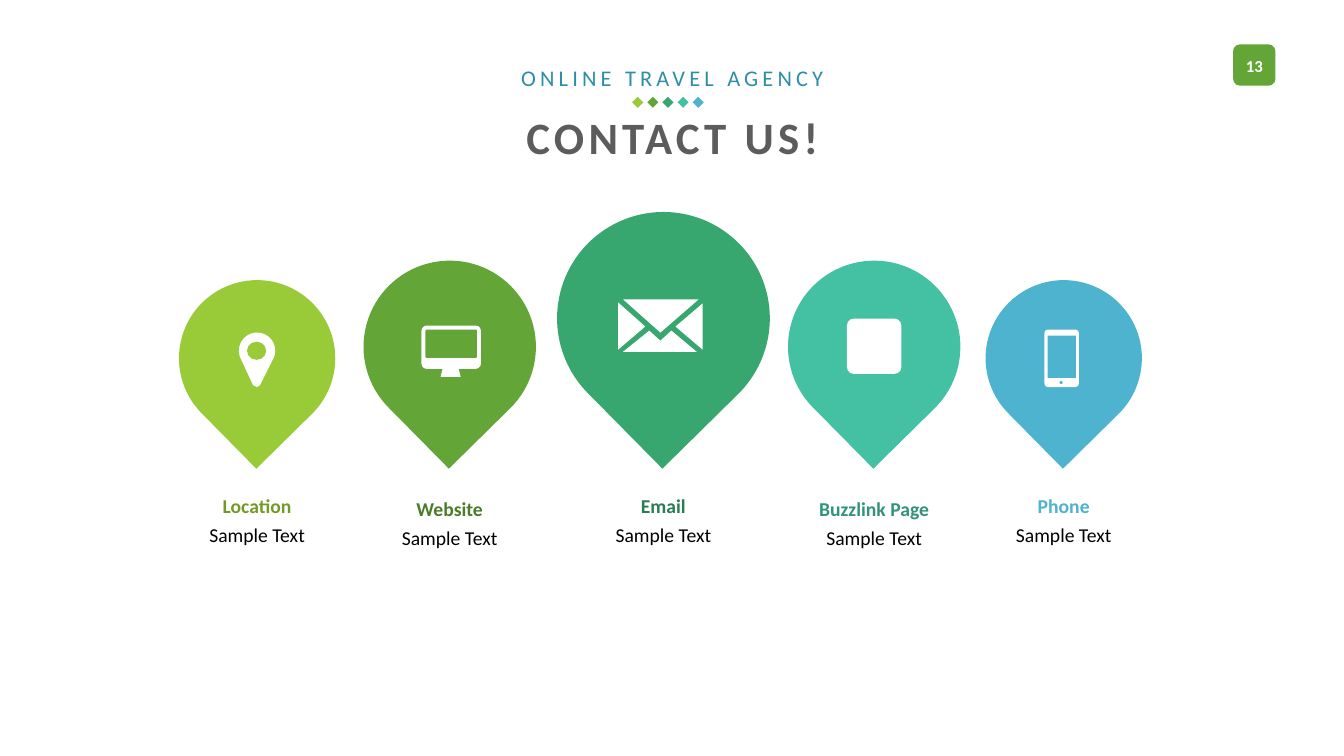
"""Build the contact slide with five map-pin drops."""
from math import cos, radians, sin, sqrt

from pptx import Presentation
from pptx.dml.color import RGBColor
from pptx.enum.shapes import MSO_SHAPE as Kind
from pptx.enum.text import MSO_ANCHOR as Anchor, MSO_AUTO_SIZE as Auto, PP_ALIGN as Align
from pptx.util import Inches, Pt

HUES = {
    "lime": "99CB38", "green": "63A537", "jade": "37A76F", "mint": "44C1A3",
    "sky": "4EB3CF", "white": "FFFFFF", "black": "000000", "grey": "5C5C5C",
    "blue": "2E8EA8", "lime text": "739A28", "green text": "4A7C29",
    "jade text": "297D53", "mint text": "31937B",
}
TITLE = "CONTACT US!"
AGENCY = "ONLINE TRAVEL AGENCY"
PAGE = "13"
SAMPLE = "Sample Text"
DROPS = [
    ("Location", 2.55, 1.55, "lime", "lime text", 4.85),
    ("Website", 4.46, 1.71, "green", "green text", 4.88),
    ("Email", 6.58, 2.11, "jade", "jade text", 4.85),
    ("Buzzlink Page", 8.67, 1.71, "mint", "mint text", 4.88),
    ("Phone", 10.55, 1.55, "sky", "sky", 4.85),
]
TIP = 4.65
MID = 6.67

PIN = [(2.55 + 0.18 * cos(radians(a)), 3.48 + 0.18 * sin(radians(a)))
       for a in range(157, 384, 6)]
PIN += [(2.58, 3.82), (2.55, 3.84), (2.51, 3.82)]
OUTLINES = [
    PIN,
    [(6.18, 2.97), (6.93, 2.97), (6.55, 3.3)],
    [(6.97, 3.01), (6.7, 3.24), (6.97, 3.47)],
    [(6.13, 3), (6.4, 3.24), (6.13, 3.47)],
    [(6.18, 3.49), (6.44, 3.28), (6.55, 3.38), (6.66, 3.28), (6.91, 3.49)],
]
ICONS = [
    (Kind.OVAL, (2.45, 3.39, 0.19, 0.18), "lime", None),
    (Kind.ROUNDED_RECTANGLE, (4.18, 3.23, 0.59, 0.43), "white", 0.12),
    (Kind.ROUNDED_RECTANGLE, (4.22, 3.27, 0.51, 0.28), "green", 0.04),
    (Kind.TRAPEZOID, (4.37, 3.66, 0.2, 0.08), "white", 0.25),
    (Kind.ROUNDED_RECTANGLE, (8.4, 3.16, 0.54, 0.55), "white", 0.13),
    (Kind.ROUNDED_RECTANGLE, (10.36, 3.27, 0.34, 0.57), "white", 0.1),
    (Kind.RECTANGLE, (10.39, 3.33, 0.28, 0.42), "sky", None),
    (Kind.OVAL, (10.51, 3.78, 0.03, 0.03), "sky", None),
]


def color(name):
    return RGBColor.from_string(HUES[name])


def paint(shape, hue):
    shape.shadow.inherit = False
    shape.fill.solid()
    shape.fill.fore_color.rgb = color(hue)
    shape.line.fill.background()


def draw(slide, kind, box, hue, bend=None, turn=0):
    shape = slide.shapes.add_shape(kind, *map(Inches, box))
    paint(shape, hue)
    shape.rotation = turn
    if bend is not None:
        shape.adjustments[0] = bend


def trace(slide, points, hue):
    first, *rest = [(Inches(x), Inches(y)) for x, y in points]
    pen = slide.shapes.build_freeform(*first)
    pen.add_line_segments(rest, close=True)
    paint(pen.convert_to_shape(), hue)


def write(shape, text, size, hue, bold=False, gap=0, pitch=None):
    frame = shape.text_frame
    frame.auto_size = Auto.NONE
    frame.word_wrap = True
    frame.vertical_anchor = Anchor.TOP
    para = frame.paragraphs[0]
    para.alignment = Align.CENTER
    para.line_spacing = pitch
    run = para.add_run()
    run.text = text
    font = para.font
    font.name, font.size, font.bold = "Calibri", Pt(size), bold
    font.color.rgb = color(hue)
    if gap:
        run.font._element.set("spc", str(gap * 100))


def label(slide, mid, top, wide, high, *style, **more):
    box = slide.shapes.add_textbox(*map(Inches, (mid - wide / 2, top, wide, high)))
    write(box, *style, **more)


def main():
    deck = Presentation()
    deck.slide_width, deck.slide_height = Inches(13.33), Inches(7.5)
    slide = deck.slides.add_slide(deck.slide_layouts[5])

    title = slide.shapes.title
    title.left, title.top = Inches(MID - 2), Inches(1.04)
    title.width, title.height = Inches(4), Inches(0.64)
    write(title, TITLE, 32, "grey", bold=True, gap=3)
    label(slide, MID, 0.59, 4, 0.37, AGENCY, 16, "blue", gap=3)

    draw(slide, Kind.ROUNDED_RECTANGLE, (12.23, 0.44, 0.42, 0.41), "green")
    label(slide, 12.44, 0.5, 0.41, 0.3, PAGE, 12, "white", bold=True)

    for i, (name, mid, size, hue, ink, top) in enumerate(DROPS):
        draw(slide, Kind.DIAMOND, (6.27 + 0.15 * i, 0.96, 0.11, 0.11), hue)
        left, high = mid - size / 2, TIP - size / sqrt(2) - size / 2
        draw(slide, Kind.TEAR, (left, high, size, size), hue, turn=135.4)
        label(slide, mid, top, 2, 0.34, name, 14, ink, bold=True)
        label(slide, mid, top + 0.32, 2.19, 0.33, SAMPLE, 14, "black", pitch=0.89)

    for points in OUTLINES:
        trace(slide, points, "white")
    for icon in ICONS:
        draw(slide, *icon)

    deck.save("out.pptx")


if __name__ == "__main__":
    main()
